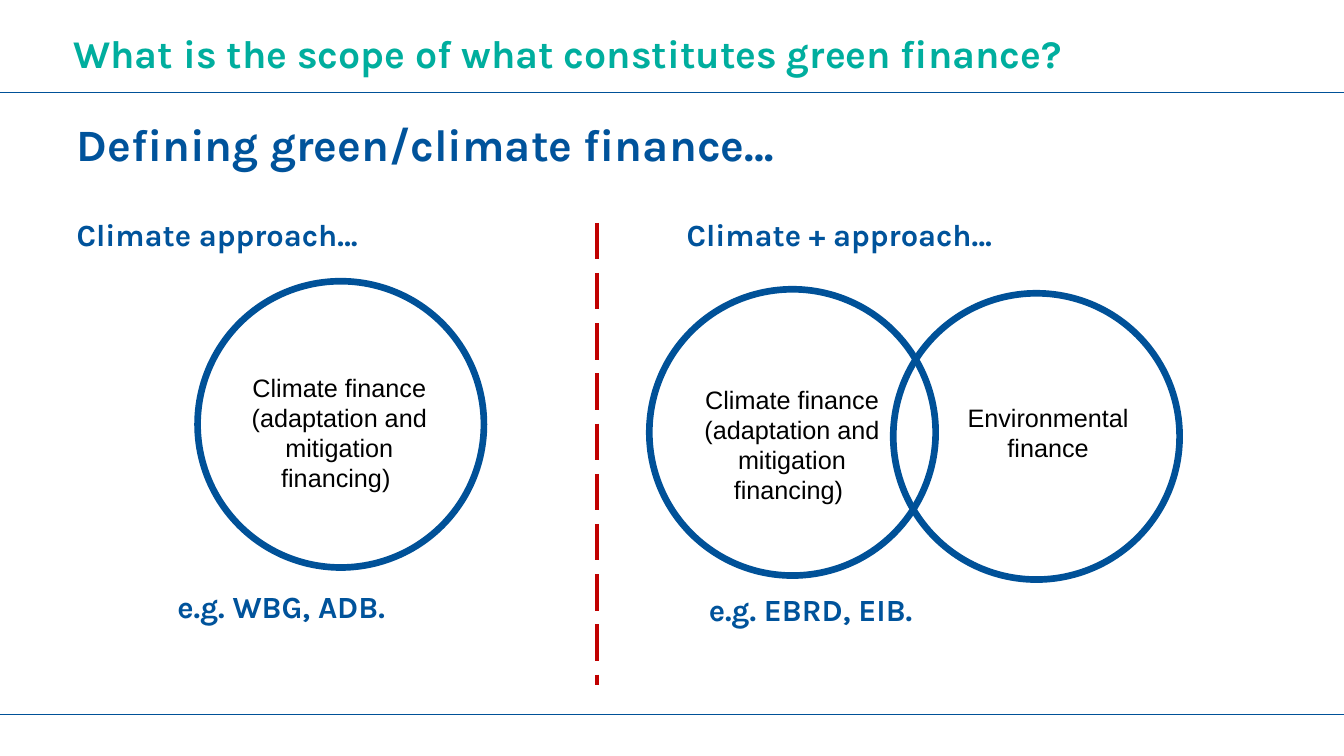
"""Build the slide on the scope of green finance."""
from typing import NamedTuple

from lxml import etree
from pptx import Presentation
from pptx import util as u
from pptx.dml.color import RGBColor
from pptx.enum import dml, shapes, text
from pptx.oxml.ns import qn

HUES = {"teal": "00AE9E", "navy": "00539B", "blue": "005198",
        "red": "C00000", "black": "000000"}
WIDE, HIGH = 13.33, 7.5
RING = 2.84
CLIMATE = "Climate finance (adaptation and mitigation financing) "


class Rule(NamedTuple):
    start: tuple[float, float]
    end: tuple[float, float]
    hue: str = "blue"
    weight: float = 0.25
    dash: dml.MSO_LINE | None = None


class Head(NamedTuple):
    words: str
    left: float
    top: float
    width: float = 4.81
    size: int = 22
    height: float = 1.79
    hue: str = "navy"
    inset: float = 0.6
    after: int = 60


class Note(NamedTuple):
    words: str
    left: float
    top: float
    height: float


RULES = [Rule((0, y), (WIDE, y)) for y in (0.91, 7.09)]
SPLIT = Rule((5.92, 2.21), (5.92, 6.8), "red", 3.25, dml.MSO_LINE.LONG_DASH)
HEADS = [
    Head("What is the scope of what constitutes green finance?",
         0.63, 0.24, 11.01, 28, 0.57, "teal", 0.1, 0),
    Head("Defining green/climate finance…", 0.16, 1.11, 11.88, 32),
    Head("Climate approach…", 0.16, 2.09),
    Head("e.g. WBG, ADB.", 1.16, 5.78),
    Head("Climate + approach…", 6.21, 2.09, 6.05),
    Head("e.g. EBRD, EIB.", 6.43, 5.81),
]
RINGS = [(1.96, 2.79), (6.44, 2.87), (8.86, 2.91)]
NOTES = [
    Note(CLIMATE, 2.27, 3.64, 1.31),
    Note(CLIMATE, 6.76, 3.76, 1.31),
    Note("Environmental finance", 9.3, 3.94, 0.71),
]


def tint(name: str) -> RGBColor:
    return RGBColor.from_string(HUES[name])


def draw_rule(slide, rule: Rule) -> None:
    ends = [u.Inches(n) for n in (*rule.start, *rule.end)]
    line = slide.shapes.add_connector(shapes.MSO_CONNECTOR.STRAIGHT, *ends)
    line.line.color.rgb = tint(rule.hue)
    line.line.width = u.Pt(rule.weight)
    if rule.dash is not None:
        line.line.dash_style = rule.dash
    etree.SubElement(line._element.spPr, qn("a:effectLst"))


def draw_ring(slide, left: float, top: float) -> None:
    area = [u.Inches(n) for n in (left, top, RING, RING)]
    ring = slide.shapes.add_shape(shapes.MSO_SHAPE.OVAL, *area)
    ring.shadow.inherit = False
    ring.fill.background()
    ring.line.color.rgb = tint("blue")
    ring.line.width = u.Pt(4.75)


def add_text(slide, area: tuple[float, ...], words: str, face: str,
             size: int, hue: str, bold: bool):
    box = slide.shapes.add_textbox(*(u.Inches(n) for n in area))
    frame = box.text_frame
    frame.word_wrap = True
    run = frame.paragraphs[0].add_run()
    run.text = words
    run.font.name = face
    run.font.size = u.Pt(size)
    run.font.bold = bold
    run.font.color.rgb = tint(hue)
    return frame


def draw_head(slide, head: Head) -> None:
    area = (head.left, head.top, head.width, head.height)
    frame = add_text(slide, area, head.words, "Karla", head.size, head.hue, True)
    frame.margin_left = u.Inches(head.inset)
    frame.paragraphs[0].space_after = u.Pt(head.after)


def draw_note(slide, note: Note) -> None:
    area = (note.left, note.top, 2.19, note.height)
    frame = add_text(slide, area, note.words, "Arial", 18, "black", False)
    frame.paragraphs[0].alignment = text.PP_ALIGN.CENTER


def main() -> None:
    deck = Presentation()
    deck.slide_width, deck.slide_height = u.Inches(WIDE), u.Inches(HIGH)
    slide = deck.slides.add_slide(deck.slide_layouts[6])
    for rule in RULES:
        draw_rule(slide, rule)
    for head in HEADS:
        draw_head(slide, head)
    for left, top in RINGS:
        draw_ring(slide, left, top)
    for note in NOTES:
        draw_note(slide, note)
    draw_rule(slide, SPLIT)
    deck.save("out.pptx")


if __name__ == "__main__":
    main()
